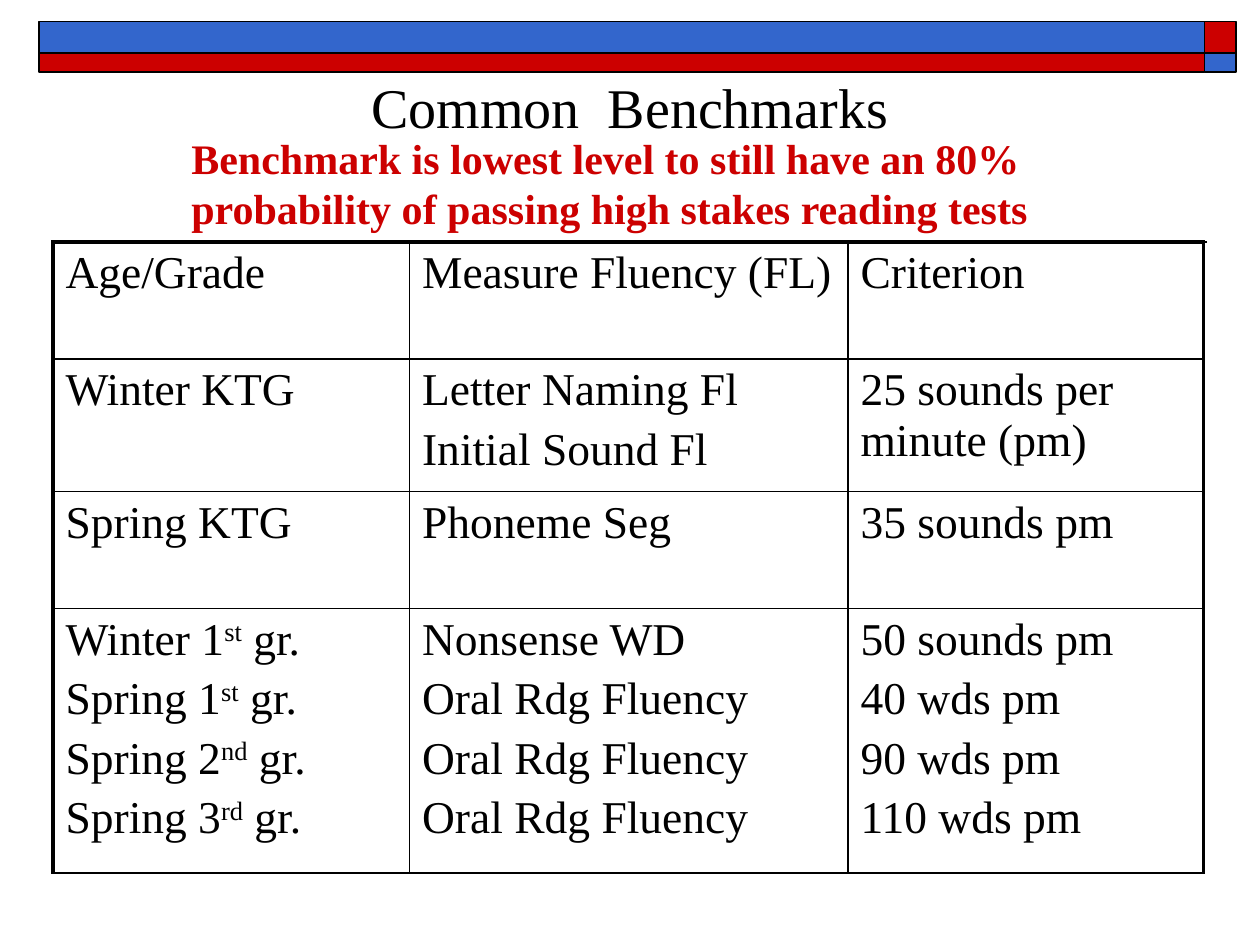
from lxml.etree import SubElement
from pptx import Presentation
from pptx.dml.color import RGBColor
from pptx.enum.shapes import MSO_CONNECTOR, MSO_SHAPE
from pptx.enum.text import MSO_ANCHOR, PP_ALIGN
from pptx.oxml.ns import qn
from pptx.util import Inches, Pt

COLORS = {"black": "000000", "blue": "3366CC", "red": "CC0000"}
FACE = "Times New Roman"
COLS = [2.83, 3.48, 2.82]
ROWS = [0.93, 1.05, 0.93, 2.1]
GRID = [
    ["Age/Grade", "Measure Fluency (FL)", "Criterion"],
    ["Winter KTG", "Letter Naming Fl\nInitial Sound Fl", "25 sounds per minute (pm)"],
    ["Spring KTG", "Phoneme Seg", "35 sounds pm"],
    [
        "Winter 1^st^ gr.\nSpring 1^st^ gr.\nSpring 2^nd^ gr.\nSpring 3^rd^ gr.",
        "Nonsense WD\nOral Rdg Fluency\nOral Rdg Fluency\nOral Rdg Fluency",
        "50 sounds pm\n40 wds pm\n90 wds pm\n110 wds pm",
    ],
]


def color(name):
    """Return the named colour."""
    return RGBColor.from_string(COLORS[name])


def write(frame, text, size, tint="black", bold=False, align=None, gap=0):
    """Fill a frame with one paragraph a line, raising text between carets."""
    for i, line in enumerate(text.split("\n")):
        para = frame.paragraphs[0] if i == 0 else frame.add_paragraph()
        para.alignment = align
        if i and gap:
            para.space_before = Pt(gap)
        font = para.font
        font.name, font.size, font.bold = FACE, Pt(size), bold
        font.color.rgb = color(tint)
        for j, part in enumerate(line.split("^")):
            run = para.add_run()
            run.text = part
            if j % 2:
                run.font._element.set("baseline", "30000")


def add_label(slide, box, text, size, anchor=MSO_ANCHOR.TOP, **style):
    """Add a wrapped text box."""
    frame = slide.shapes.add_textbox(*map(Inches, box)).text_frame
    frame.word_wrap = True
    frame.vertical_anchor = anchor
    write(frame, text, size, **style)


def add_block(slide, box, tint):
    """Add an outlined block of the top band."""
    block = slide.shapes.add_shape(MSO_SHAPE.RECTANGLE, *map(Inches, box))
    block.shadow.inherit = False
    block.fill.solid()
    block.fill.fore_color.rgb = color(tint)
    block.line.color.rgb = color("black")
    block.line.width = Pt(1)


def add_band(slide):
    """Add the two rows of blocks across the top."""
    for top, high, tints in [(0.17, 0.25, ("blue", "red")), (0.42, 0.15, ("red", "blue"))]:
        for left, wide, tint in zip((0.31, 9.56), (9.25, 0.25), tints):
            add_block(slide, (left, top, wide, high), tint)


def add_rule(slide, start, end):
    """Add a thin black line."""
    points = map(Inches, (*start, *end))
    rule = slide.shapes.add_connector(MSO_CONNECTOR.STRAIGHT, *points)
    rule.line.color.rgb = color("black")
    rule.line.width = Pt(1)
    SubElement(rule._element.spPr, qn("a:effectLst"))


def set_edge(cell, side, width):
    """Draw one black border of a cell."""
    props = cell._tc.get_or_add_tcPr()
    edge = SubElement(props, qn(f"a:ln{side}"), w=str(Pt(width)))
    fill = SubElement(edge, qn("a:solidFill"))
    SubElement(fill, qn("a:srgbClr"), val=COLORS["black"])


def add_grid(slide, left, top):
    """Add the benchmark table with heavy left, top and right edges."""
    size = map(Inches, (left, top, sum(COLS), sum(ROWS)))
    table = slide.shapes.add_table(len(ROWS), len(COLS), *size).table
    table.first_row = table.horz_banding = False
    for col, wide in zip(table.columns, COLS):
        col.width = Inches(wide)
    for row, high in zip(table.rows, ROWS):
        row.height = Inches(high)
    for r, texts in enumerate(GRID):
        for c, text in enumerate(texts):
            cell = table.cell(r, c)
            heavy = {"L": c == 0, "R": c == len(COLS) - 1, "T": r == 0, "B": False}
            for side, thick in heavy.items():
                set_edge(cell, side, 2.25 if thick else 1)
            cell.fill.background()
            write(cell.text_frame, text, 26, gap=5.2)


def main():
    """Build and save the slide."""
    deck = Presentation()
    deck.slide_width, deck.slide_height = Inches(10), Inches(7.5)
    slide = deck.slides.add_slide(deck.slide_layouts[6])
    add_rule(slide, (9.58, 1.92), (0.5, 1.92))
    add_band(slide)
    add_label(slide, (0.5, 0.33, 9, 0.83), "Common  Benchmarks", 32,
              anchor=MSO_ANCHOR.BOTTOM, align=PP_ALIGN.CENTER)
    add_grid(slide, 0.42, 1.92)
    add_label(slide, (1.42, 1, 7.08, 0.91),
              "Benchmark is lowest level to still have an 80%\n"
              "probability of passing high stakes reading tests",
              24, tint="red", bold=True)
    deck.save("out.pptx")


if __name__ == "__main__":
    main()
